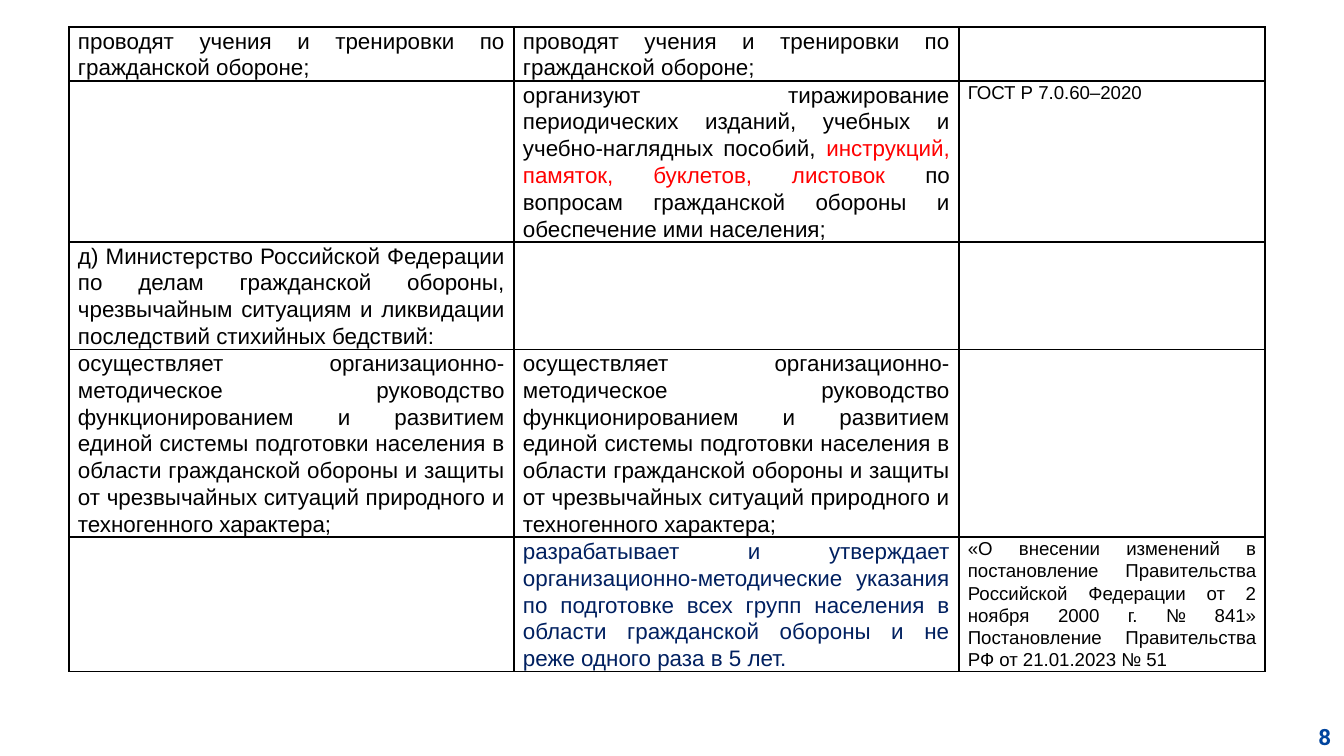
import pptx
import pptx.dml.color
import pptx.enum.text
import pptx.oxml
import pptx.oxml.ns
import pptx.util

SCALE = 914400 / 134.4
ALIGN = pptx.enum.text.PP_ALIGN
BLACK, RED, NAVY, BLUE = "000000", "FF0000", "002060", "00449E"


def px(n):
    """Turn slide pixels into EMU."""
    return pptx.util.Emu(round(n * SCALE))


def write(par, text, color, **form):
    """Add a run with the given colour and font values."""
    run = par.add_run()
    run.text = text
    run.font.color.rgb = pptx.dml.color.RGBColor.from_string(color)
    for key, value in form.items():
        setattr(run.font, key, value)


deck = pptx.Presentation()
deck.slide_width, deck.slide_height = px(1344), px(756)
slide = deck.slides.add_slide(deck.slide_layouts[6])

# Each cell is a list of (text, colour) runs
drill = [("проводят учения и тренировки по гражданской обороне;", BLACK)]
guide = [("осуществляет организационно-методическое руководство "
          "функционированием и развитием единой системы подготовки "
          "населения в области гражданской обороны и защиты от "
          "чрезвычайных ситуаций природного и техногенного характера;", BLACK)]
prints = [("организуют тиражирование периодических изданий, учебных и "
           "учебно-наглядных пособий, ", BLACK),
          ("инструкций, памяток, буклетов, листовок", RED),
          (" по вопросам гражданской обороны и обеспечение ими населения;", BLACK)]
agency = [("д) Министерство Российской Федерации по делам гражданской обороны, "
           "чрезвычайным ситуациям и ликвидации последствий стихийных бедствий:",
           BLACK)]
orders = [("разрабатывает и утверждает организационно-методические указания по "
           "подготовке всех групп населения в области гражданской обороны и не "
           "реже одного раза в 5 лет.", NAVY)]
norm = [("ГОСТ Р 7.0.60–2020", BLACK)]
decree = [("«О внесении изменений в постановление Правительства Российской "
           "Федерации от 2 ноября 2000 г. № 841» Постановление Правительства РФ "
           "от 21.01.2023 № 51", BLACK)]
rows = [
    (54, [drill, drill, []]),
    (161, [[], prints, norm]),
    (107, [agency, [], []]),
    (188, [guide, guide, []]),
    (134, [[], orders, decree]),
]
widths = [445, 445, 306]
sizes = [12, 12, 10]

frame = slide.shapes.add_table(len(rows), len(widths), px(69), px(27),
                               px(sum(widths)), px(sum(h for h, _ in rows)))
table = frame.table
table.first_row = table.horz_banding = False
for col, width in zip(table.columns, widths):
    col.width = px(width)

inset = {"margin_left": px(9), "margin_right": px(9),
         "margin_top": 0, "margin_bottom": 0}
for r, (height, cells) in enumerate(rows):
    table.rows[r].height = px(height)
    for c, runs in enumerate(cells):
        cell = table.cell(r, c)
        for key, value in inset.items():
            setattr(cell, key, value)
        props = cell._tc.get_or_add_tcPr()
        for side in "LRTB":
            props.append(pptx.oxml.parse_xml(
                f'<a:ln{side} {pptx.oxml.ns.nsdecls("a")} w="12700"><a:solidFill>'
                f'<a:srgbClr val="{BLACK}"/></a:solidFill></a:ln{side}>'))
        cell.fill.background()
        par = cell.text_frame.paragraphs[0]
        par.alignment = ALIGN.JUSTIFY
        par.line_spacing = 1.07
        for text, color in runs:
            write(par, text, color, name="Arial", size=pptx.util.Pt(sizes[c]))

page = slide.shapes.add_textbox(px(1265), px(717), px(79), px(39)).text_frame
page.word_wrap = True
par = page.paragraphs[0]
par.alignment = ALIGN.RIGHT
write(par, "8", BLUE, name="Roboto Slab", size=pptx.util.Pt(12), bold=True)

deck.save("out.pptx")
